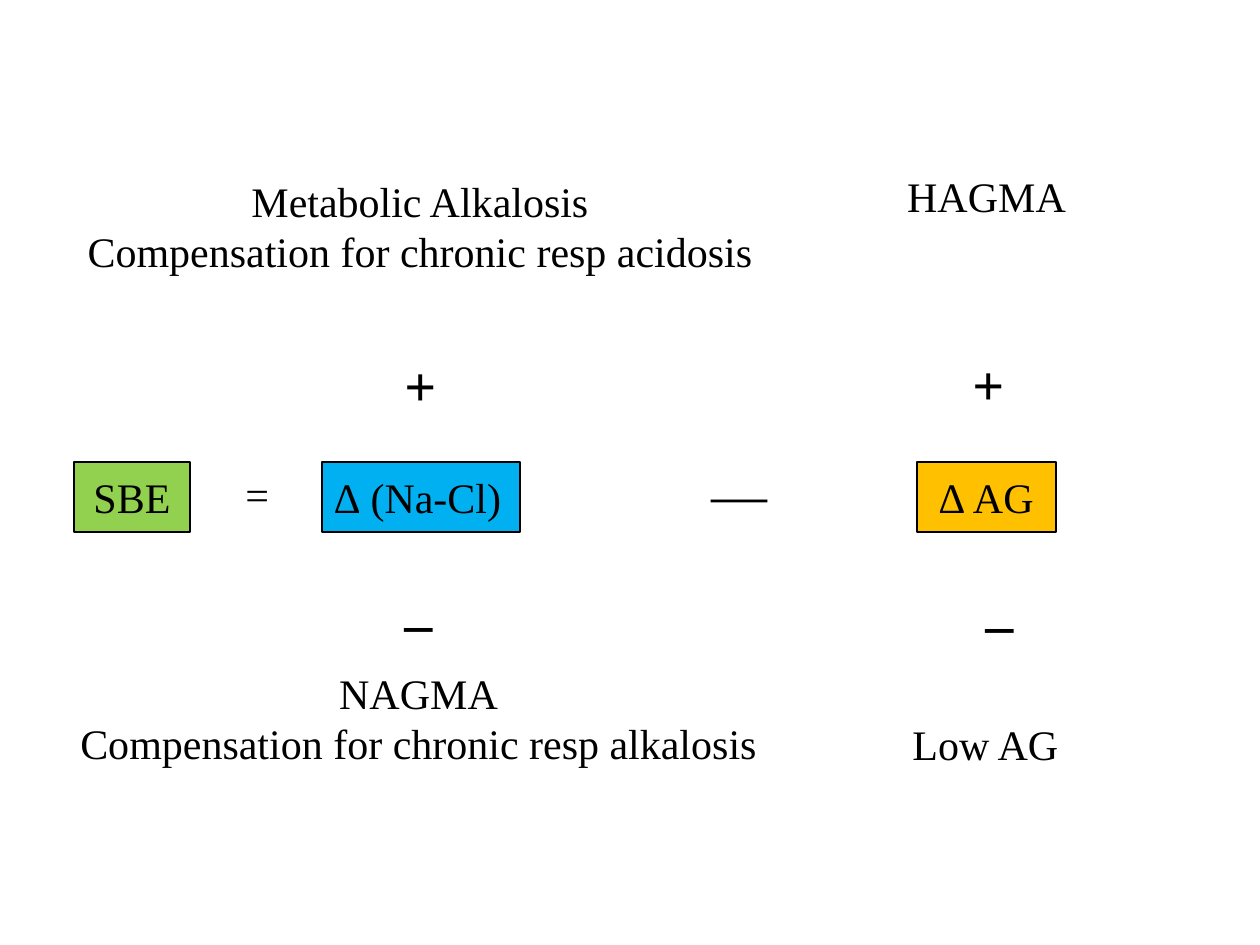
from pptx import Presentation
from pptx.dml.color import RGBColor
from pptx.enum.shapes import MSO_SHAPE as Shape
from pptx.enum.text import MSO_ANCHOR as Anchor, MSO_AUTO_SIZE as Fit, PP_ALIGN as Align
from pptx.util import Pt

PX = 914400 // 126
BLACK = RGBColor(0x00, 0x00, 0x00)
GREEN = RGBColor(0x92, 0xD0, 0x50)
BLUE = RGBColor(0x00, 0xB0, 0xF0)
AMBER = RGBColor(0xFF, 0xC0, 0x00)
LEFT, MID = Align.LEFT, Align.CENTER

prs = Presentation()
prs.slide_width, prs.slide_height = 1260 * PX, 945 * PX
slide = prs.slides.add_slide(prs.slide_layouts[6])


def write(shape, text, size, align, bold=None):
    frame = shape.text_frame
    frame.text = text
    for par in frame.paragraphs:
        par.alignment = align
        for run in par.runs:
            font = run.font
            font.name, font.size, font.bold = "Times New Roman", Pt(size), bold
            font.color.rgb = BLACK


def label(text, x, y, w, h, size=24, align=LEFT, wrap=False, bold=None):
    box = slide.shapes.add_textbox(x * PX, y * PX, w * PX, h * PX)
    box.text_frame.word_wrap = wrap
    box.text_frame.auto_size = Fit.SHAPE_TO_FIT_TEXT
    write(box, text, size, align, bold)


# Coloured terms of the equation
for text, x, w, fill, align in [
    ("SBE", 74, 116, GREEN, MID),
    ("∆ (Na-Cl)", 322, 198, BLUE, LEFT),
    ("∆ AG", 917, 139, AMBER, MID),
]:
    term = slide.shapes.add_shape(Shape.RECTANGLE, x * PX, 462 * PX, w * PX, 70 * PX)
    term.shadow.inherit = False
    term.fill.solid()
    term.fill.fore_color.rgb = fill
    term.line.color.rgb = BLACK
    term.line.width = Pt(0.75)
    term.text_frame.vertical_anchor = Anchor.MIDDLE
    write(term, text, 24, align)

# Operators between the terms
label("=", 233, 462, 49, 63)
label("—", 699, 452, 39, 81, size=32, wrap=True)

# Disorders above and below the terms
for text, x, y, w, h in [
    ("Metabolic Alkalosis\nCompensation for chronic resp acidosis", 39, 169, 762, 115),
    ("HAGMA", 787, 164, 399, 63),
    ("NAGMA\nCompensation for chronic resp alkalosis", 62, 661, 713, 115),
]:
    label(text, x, y, w, h, align=MID, wrap=True)
label("Low AG", 900, 712, 173, 63)

# Signs pointing to each disorder
for sign, x, y, w in [
    ("+", 392, 344, 57),
    ("+", 960, 343, 57),
    ("–", 392, 581, 54),
    ("–", 973, 582, 54),
]:
    label(sign, x, y, w, 81, size=32, bold=True)

prs.save("out.pptx")
